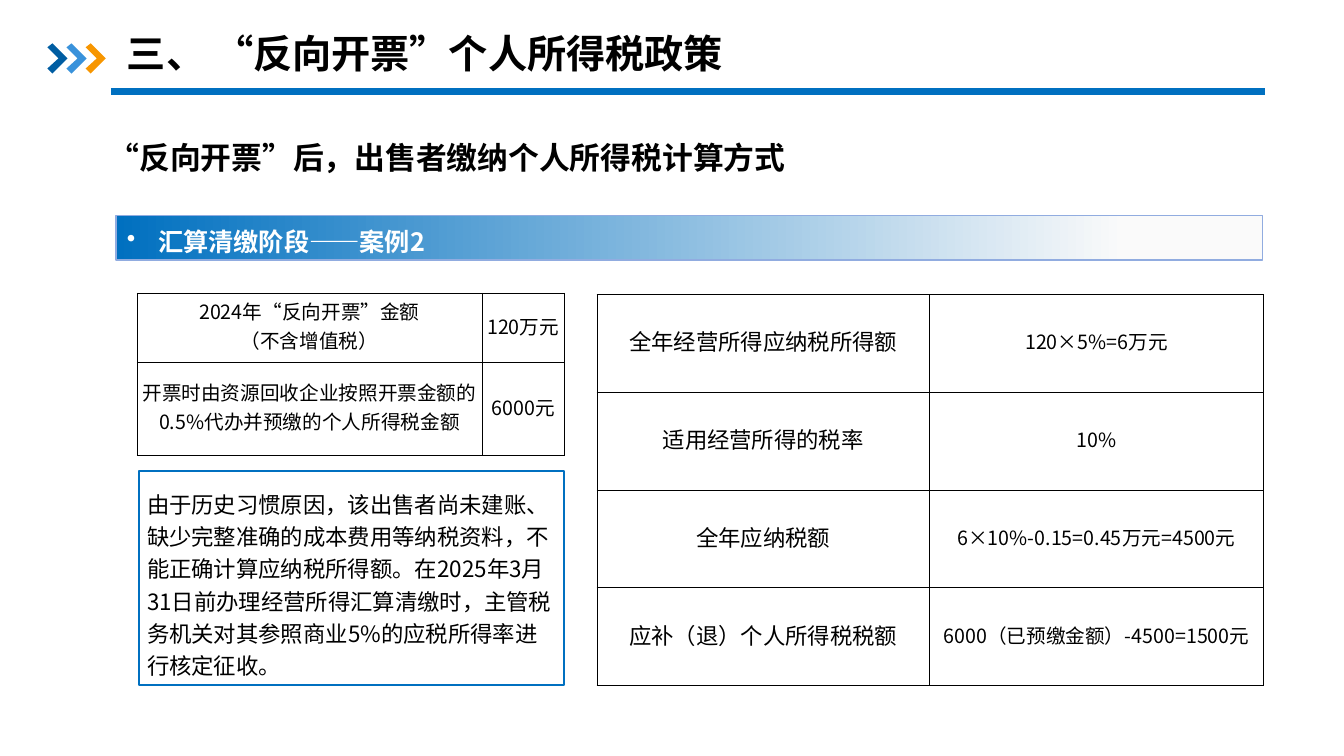
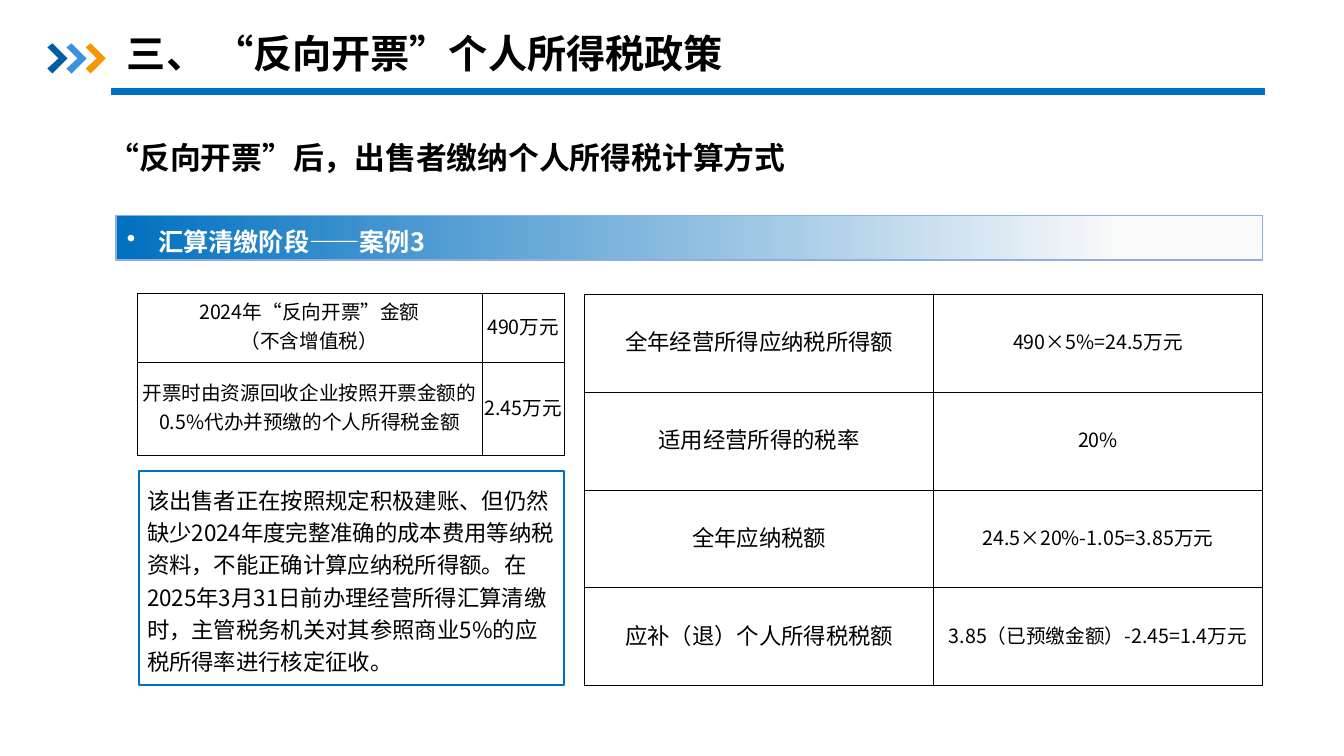
from pptx import Presentation
from pptx.dml.color import RGBColor
from pptx.enum.lang import MSO_LANGUAGE_ID
from pptx.enum.shapes import MSO_CONNECTOR, MSO_SHAPE
from pptx.enum.text import MSO_ANCHOR, PP_ALIGN
from pptx.oxml.ns import qn
from pptx.util import Inches, Pt
from lxml.etree import SubElement

FONT = "Noto Sans CJK SC"
BLACK, WHITE, BLUE = "000000", "FFFFFF", "0070C0"
BAND_END, BAND_LINE = "FAFAFA", "91ACE0"
CHEVRONS = ["005DA2", "3992DB", "F79600"]
CHEVRON_POINTS = [(0, 0.04), (0.05, 0), (0.2, 0.15), (0.05, 0.3), (0, 0.25), (0.11, 0.15)]

TITLE = {"size": Pt(28), "bold": True}
SUBTITLE = {"size": Pt(22), "bold": True}
BAND = {"size": Pt(18), "bold": True}
BODY = {"size": Pt(16)}
SMALL = {"size": Pt(14)}
TALL_LINE = {"line_spacing": Pt(40)}
CELL = {
    "margin_left": Inches(0.01), "margin_right": Inches(0.01),
    "margin_top": Inches(0.01), "margin_bottom": Inches(0.05),
    "vertical_anchor": MSO_ANCHOR.MIDDLE,
}

CASES = [
    {
        "number": 2, "amount": "120万元", "prepaid": "6000元", "note_top": 4.77,
        "note": "由于历史习惯原因，该出售者尚未建账、缺少完整准确的成本费用等纳税资料，不能正确计算应纳税所得额。"
                "在2025年3月31日前办理经营所得汇算清缴时，主管税务机关对其参照商业5%的应税所得率进行核定征收。",
        "left": 5.92, "cols": [3.3, 3.31],
        "results": ["120×5%=6万元", "10%", "6×10%-0.15=0.45万元=4500元",
                    "6000（已预缴金额）-4500=1500元"],
    },
    {
        "number": 3, "amount": "490万元", "prepaid": "2.45万元", "note_top": 4.73,
        "note": "该出售者正在按照规定积极建账、但仍然缺少2024年度完整准确的成本费用等纳税资料，不能正确计算应纳税所得额。"
                "在2025年3月31日前办理经营所得汇算清缴时，主管税务机关对其参照商业5%的应税所得率进行核定征收。",
        "left": 5.8, "cols": [3.46, 3.26],
        "results": ["490×5%=24.5万元", "20%", "24.5×20%-1.05=3.85万元",
                    "3.85（已预缴金额）-2.45=1.4万元"],
    },
]
STEPS = ["全年经营所得应纳税所得额", "适用经营所得的税率", "全年应纳税额", "应补（退）个人所得税税额"]


def rgb(color):
    """Turn a hex string into a colour."""
    return RGBColor.from_string(color)


def apply(obj, values):
    """Set each attribute in values on obj."""
    for name, value in values.items():
        setattr(obj, name, value)


def write(tf, text, font, color=BLACK, para=None):
    """Write the lines of text into a text frame."""
    for i, line in enumerate(text.split("\n")):
        p = tf.add_paragraph() if i else tf.paragraphs[0]
        apply(p, para or {})
        r = p.add_run()
        r.text = line
        apply(r.font, {"name": FONT, "language_id": MSO_LANGUAGE_ID.SIMPLIFIED_CHINESE, **font})
        r.font.color.rgb = rgb(color)
        SubElement(r.font._element, qn("a:ea"), typeface=FONT)


def add_text(s, box, text, font, color=BLACK, para=None, wrap=True):
    """Add a text box and return its text frame."""
    tf = s.shapes.add_textbox(*map(Inches, box)).text_frame
    tf.word_wrap = wrap
    write(tf, text, font, color, para)
    return tf


def add_bullet(p, indent):
    """Give a paragraph a round bullet with a hanging indent."""
    pPr = p._p.get_or_add_pPr()
    pPr.set("marL", str(Inches(indent)))
    pPr.set("indent", str(-Inches(indent)))
    SubElement(pPr, qn("a:buChar"), char="•")


def add_rect(s, box, line, width):
    """Add an unfilled rectangle with an outline."""
    sp = s.shapes.add_shape(MSO_SHAPE.RECTANGLE, *map(Inches, box))
    sp.shadow.inherit = False
    sp.fill.background()
    sp.line.color.rgb = rgb(line)
    sp.line.width = Pt(width)
    return sp


def add_rule(s, left, right, y, width):
    """Add a horizontal blue rule."""
    c = s.shapes.add_connector(MSO_CONNECTOR.STRAIGHT, *map(Inches, (left, y, right, y)))
    c.line.color.rgb = rgb(BLUE)
    c.line.width = Pt(width)
    SubElement(c._element.spPr, qn("a:effectLst"))


def add_chevrons(s, left, top, step):
    """Add the grouped row of coloured chevrons."""
    group = s.shapes.add_group_shape()
    for i, color in enumerate(CHEVRONS):
        points = [(Inches(left + i * step + x), Inches(top + y)) for x, y in CHEVRON_POINTS]
        fb = group.shapes.build_freeform(*points[0])
        fb.add_line_segments(points[1:], close=True)
        sp = fb.convert_to_shape()
        sp.shadow.inherit = False
        sp.fill.solid()
        sp.fill.fore_color.rgb = rgb(color)
        sp.line.fill.background()


def add_borders(cell):
    """Draw thin black borders around a cell."""
    tcPr = cell._tc.get_or_add_tcPr()
    for side in ("lnL", "lnR", "lnT", "lnB"):
        ln = SubElement(tcPr, qn(f"a:{side}"), w=str(Pt(0.5)))
        SubElement(SubElement(ln, qn("a:solidFill")), qn("a:srgbClr"), val=BLACK)


def add_grid(s, left, top, cols, rows, cells, fonts):
    """Add a bordered table with one font format per column."""
    box = map(Inches, (left, top, sum(cols), sum(rows)))
    table = s.shapes.add_table(len(rows), len(cols), *box).table
    apply(table, {"first_row": False, "horz_banding": False})
    for col, width in zip(table.columns, cols):
        col.width = Inches(width)
    for row, height, texts in zip(table.rows, rows, cells):
        row.height = Inches(height)
        for cell, text, font in zip(row.cells, texts, fonts):
            apply(cell, CELL)
            add_borders(cell)
            cell.fill.background()
            write(cell.text_frame, text, font, para={"alignment": PP_ALIGN.CENTER})


def add_header(s):
    """Add the chevrons, rule, title and subtitle."""
    add_rule(s, 1.1, 12.55, 0.91, 5)
    add_chevrons(s, 0.47, 0.43, 0.19)
    add_text(s, (1.16, 0.24, 6.15, 1.04), "三、 “反向开票”个人所得税政策", TITLE, wrap=False)
    add_text(s, (0.98, 1.14, 11.06, 0.66), "“反向开票”后，出售者缴纳个人所得税计算方式",
             SUBTITLE, para=TALL_LINE)


def add_band(s, text):
    """Add the gradient band with its bulleted heading."""
    sp = add_rect(s, (1.15, 2.14, 11.37, 0.44), BAND_LINE, 1)
    sp.fill.gradient()
    sp.fill.gradient_angle = 180
    for stop, position, color in zip(sp.fill.gradient_stops, (0.12, 1), (BAND_END, BLUE)):
        stop.position = position
        stop.color.rgb = rgb(color)
    tf = add_text(s, (1.16, 1.94, 11.06, 0.66), text, BAND, WHITE,
                  {"alignment": PP_ALIGN.JUSTIFY, **TALL_LINE})
    add_bullet(tf.paragraphs[0], 0.31)


def add_case(prs, case):
    """Add the slide for one tax case."""
    s = prs.slides.add_slide(prs.slide_layouts[6])
    add_header(s)
    add_band(s, f"汇算清缴阶段——案例{case['number']}")
    add_text(s, (1.36, case["note_top"], 4.25, 2.04), case["note"], BODY, para={"line_spacing": 1.2})
    add_rect(s, (1.38, 4.67, 4.21, 2.13), BLUE, 1.5)
    facts = [
        ("2024年“反向开票”金额\n（不含增值税）", case["amount"]),
        ("开票时由资源回收企业按照开票金额的0.5%代办并预缴的个人所得税金额", case["prepaid"]),
    ]
    add_grid(s, 1.36, 2.91, [3.42, 0.82], [0.68, 0.93], facts, [SMALL, SMALL])
    add_grid(s, case["left"], 2.92, case["cols"], [0.97] * len(STEPS),
             zip(STEPS, case["results"]), [BODY, SMALL])


def main():
    """Build and save the presentation."""
    prs = Presentation()
    prs.slide_width, prs.slide_height = Inches(13.33), Inches(7.5)
    for case in CASES:
        add_case(prs, case)
    prs.save("out.pptx")


if __name__ == "__main__":
    main()
